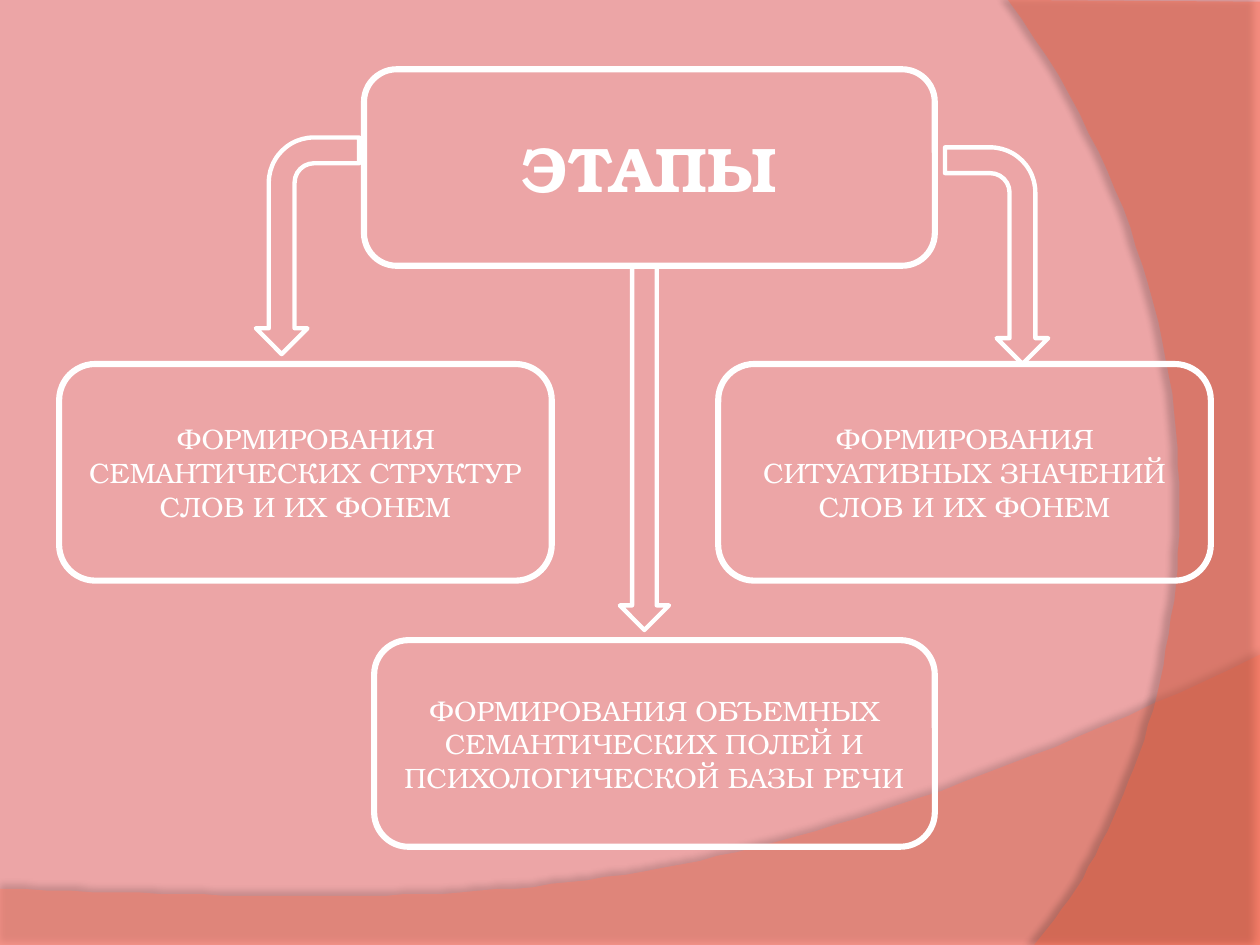
from lxml.etree import SubElement
from pptx import Presentation
from pptx.dml.color import RGBColor
from pptx.enum.shapes import MSO_SHAPE
from pptx.enum.text import MSO_ANCHOR, PP_ALIGN
from pptx.oxml.ns import qn
from pptx.util import Pt

FONT = "TeX Gyre Bonum"
WHITE = "FFFFFF"
BACKGROUND = "ECA5A6"
CURVE_STEPS = 60


def color(value):
    return RGBColor.from_string(value)


def set_alpha(color_element, percent):
    SubElement(color_element, qn("a:alpha"), val=str(percent * 1000))


def curve_points(start, control1, control2, end):
    points = []
    for step in range(CURVE_STEPS + 1):
        t = step / CURVE_STEPS
        weights = ((1 - t) ** 3, 3 * t * (1 - t) ** 2, 3 * t**2 * (1 - t), t**3)
        points.append(tuple(
            sum(weight * value for weight, value in zip(weights, values))
            for values in zip(start, control1, control2, end)
        ))
    return points


def add_shadow(shape, opacity, distance, direction):
    shape.shadow.inherit = False
    effects = shape._element.spPr.find(qn("a:effectLst"))
    shadow = SubElement(
        effects, qn("a:outerShdw"), blurRad=str(Pt(4)), dist=str(Pt(distance)),
        dir=str(direction * 60000), algn="ctr", rotWithShape="0",
    )
    set_alpha(SubElement(shadow, qn("a:srgbClr"), val="000000"), opacity)


def add_wave(slide, corners, curve, fill, opacity, shadow):
    builder = slide.shapes.build_freeform(*corners[0], scale=Pt(1))
    builder.add_line_segments(corners[1:] + curve_points(*curve), close=True)
    shape = builder.convert_to_shape()
    shape.fill.solid()
    shape.fill.fore_color.rgb = color(fill)
    set_alpha(shape._element.spPr.find(".//" + qn("a:srgbClr")), opacity)
    shape.line.fill.background()
    add_shadow(shape, *shadow)


def add_outline(slide, kind, left, top, width, height, line_width):
    shape = slide.shapes.add_shape(kind, Pt(left), Pt(top), Pt(width), Pt(height))
    shape.shadow.inherit = False
    shape.fill.background()
    shape.line.color.rgb = color(WHITE)
    shape.line.width = Pt(line_width)
    return shape


def add_box(slide, text, left, top, width, height, size=16, bold=False):
    shape = add_outline(slide, MSO_SHAPE.ROUNDED_RECTANGLE, left, top, width, height, 3.5)
    frame = shape.text_frame
    frame.word_wrap = True
    frame.vertical_anchor = MSO_ANCHOR.MIDDLE
    paragraph = frame.paragraphs[0]
    paragraph.text = text
    paragraph.alignment = PP_ALIGN.CENTER
    font = paragraph.font
    font.name = FONT
    font.size = Pt(size)
    font.bold = bold
    font.color.rgb = color(WHITE)


def add_bent_arrow(slide, left, top, flipped=False):
    shape = add_outline(slide, MSO_SHAPE.BENT_ARROW, left, top, 123.8, 59, 2.5)
    shape.adjustments[3] = 0.438
    shape.rotation = 90
    if flipped:
        shape._element.spPr.xfrm.set("flipV", "1")


def main():
    presentation = Presentation()
    presentation.slide_width = Pt(720)
    presentation.slide_height = Pt(540)
    slide = presentation.slides.add_slide(presentation.slide_layouts[6])
    slide.background.fill.solid()
    slide.background.fill.fore_color.rgb = color(BACKGROUND)

    add_wave(slide, [(0, 507.6), (0, 540.7), (720, 540.7)],
             [(720, 374.4), (402.5, 524.9), (281.5, 517.7), (0, 507.6)],
             "FF7E66", 45, (35, 3.5, 270))
    add_wave(slide, [(720, 1.4), (720, 540)],
             [(591.1, 540), (673.2, 445.7), (733, 216), (576, 0)],
             "FF6542", 40, (45, 4, 180))

    add_box(slide, "ЭТАПЫ", 208, 39.6, 326.2, 112.3, size=36, bold=True)
    add_box(slide, "ФОРМИРОВАНИЯ СЕМАНТИЧЕСКИХ СТРУКТУР СЛОВ И ИХ ФОНЕМ",
            33.8, 208, 281.5, 123.8)
    add_box(slide, "ФОРМИРОВАНИЯ СИТУАТИВНЫХ ЗНАЧЕНИЙ СЛОВ И ИХ ФОНЕМ",
            410.4, 208, 281.5, 123.8)
    add_box(slide, "ФОРМИРОВАНИЯ ОБЪЕМНЫХ СЕМАНТИЧЕСКИХ ПОЛЕЙ И ПСИХОЛОГИЧЕСКОЙ БАЗЫ РЕЧИ",
            213.8, 365.8, 320.4, 118.1)

    add_bent_arrow(slide, 113.8, 110.9, flipped=True)
    add_bent_arrow(slide, 507.6, 116.6)
    add_outline(slide, MSO_SHAPE.DOWN_ARROW, 354.2, 151.9, 28.1, 208.1, 2.5)

    presentation.save("out.pptx")


if __name__ == "__main__":
    main()
